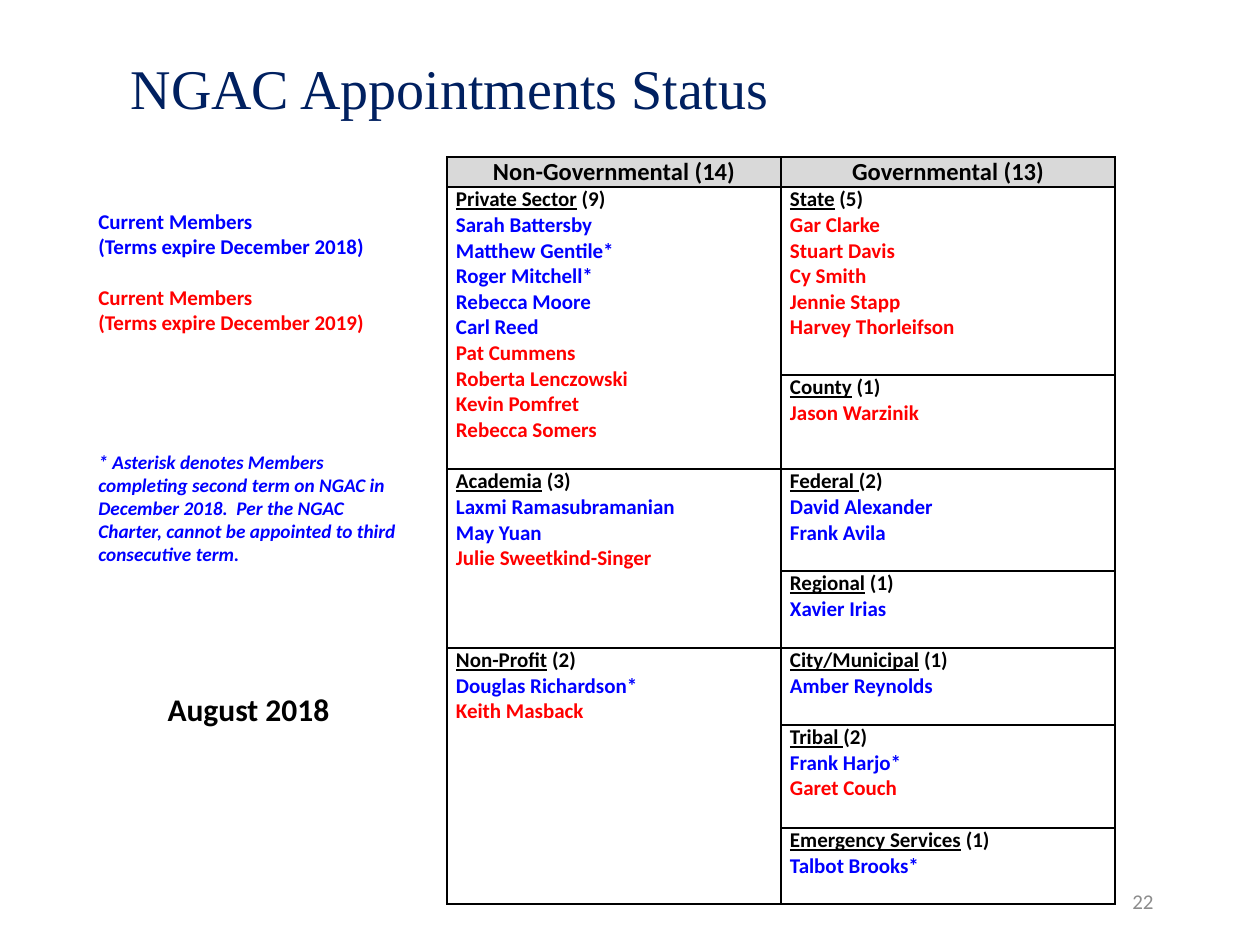
from lxml.etree import SubElement as Sub
from pptx import Presentation as Deck
from pptx.dml.color import RGBColor as Rgb
from pptx.enum.text import MSO_ANCHOR as Anchor, PP_ALIGN as Align
from pptx.oxml.ns import qn
from pptx.util import Pt

SCALE = 914400 / 126
BLUE, RED, BLACK = "0000FF", "FF0000", "000000"
BASE = dict(name="Calibri", size=Pt(12), bold=True)
TITLE = dict(name="Times New Roman", size=Pt(32), bold=False)
HEAD = BASE | dict(size=Pt(14))
NOTE = BASE | dict(size=Pt(11), italic=True)
DATE = BASE | dict(size=Pt(18))
PAGE = BASE | dict(bold=False)

HEADS = ["Non-Governmental (14)", "Governmental (13)"]
ROWS = [30, 188, 94, 102, 77, 77, 103, 76]
GROUPS = [
    (1, 0, 2, "Private Sector", " (9)",
     ["Sarah Battersby", "Matthew Gentile*", "Roger Mitchell*",
      "Rebecca Moore", "Carl Reed"],
     ["Pat Cummens", "Roberta Lenczowski", "Kevin Pomfret", "Rebecca Somers"]),
    (3, 0, 2, "Academia", " (3)",
     ["Laxmi Ramasubramanian", "May Yuan"], ["Julie Sweetkind-Singer"]),
    (5, 0, 3, "Non-Profit", " (2)", ["Douglas Richardson*"], ["Keith Masback"]),
    (1, 1, 1, "State", " (5)", [],
     ["Gar Clarke", "Stuart Davis", "Cy Smith", "Jennie Stapp",
      "Harvey Thorleifson"]),
    (2, 1, 1, "County", " (1)", [], ["Jason Warzinik"]),
    (3, 1, 1, "Federal ", "(2)", ["David Alexander", "Frank Avila"], []),
    (4, 1, 1, "Regional", " (1)", ["Xavier Irias"], []),
    (5, 1, 1, "City/Municipal", " (1)", ["Amber Reynolds"], []),
    (6, 1, 1, "Tribal ", "(2)", ["Frank Harjo*"], ["Garet Couch"]),
    (7, 1, 1, "Emergency Services", " (1)", ["Talbot Brooks*"], []),
]
KEY = [
    ("Current Members", BASE, BLUE, 0),
    ("(Terms expire December 2018)", BASE, BLUE, 0),
    ("Current Members", BASE, RED, 14.6),
    ("(Terms expire December 2019)", BASE, RED, 0),
    ("* Asterisk denotes Members completing second term on NGAC in "
     "December 2018.  Per the NGAC Charter, cannot be appointed to third "
     "consecutive term.", NOTE, BLUE, 66),
    ("August 2018", DATE, BLACK, 71),
]


def px(n):
    return round(n * SCALE)


def tint(code):
    return Rgb.from_string(code)


def put(obj, look):
    for key, val in look.items():
        setattr(obj, key, val)


def write(para, text, look, hue):
    run = para.add_run()
    run.text = text
    put(run.font, look)
    run.font.color.rgb = tint(hue)


def next_para(frame):
    first = frame.paragraphs[0]
    return frame.add_paragraph() if first.runs else first


def place(shape, box):
    put(shape, dict(zip(("left", "top", "width", "height"), map(px, box))))


def text_box(slide, box):
    frame = slide.shapes.add_textbox(*map(px, box)).text_frame
    frame.word_wrap = True
    return frame


def title(slide, box):
    shape = slide.shapes.title
    place(shape, box)
    frame = shape.text_frame
    put(frame, dict(word_wrap=True, vertical_anchor=Anchor.MIDDLE))
    para = frame.paragraphs[0]
    put(para, dict(alignment=Align.LEFT, line_spacing=0.9))
    write(para, "NGAC Appointments Status", TITLE, "002060")


def legend(slide, box):
    frame = text_box(slide, box)
    for text, look, hue, gap in KEY:
        para = next_para(frame)
        if gap:
            para.space_before = Pt(gap)
        write(para, text, look, hue)
    para.alignment = Align.CENTER


def page(slide, box):
    frame = text_box(slide, box)
    frame.vertical_anchor = Anchor.MIDDLE
    para = frame.paragraphs[0]
    para.alignment = Align.RIGHT
    write(para, "22", PAGE, "8C8C8C")


def border(cell):
    props = cell._tc.get_or_add_tcPr()
    for side in ("lnL", "lnR", "lnT", "lnB"):
        line = Sub(props, qn("a:" + side), w=str(Pt(1)))
        fill = Sub(line, qn("a:solidFill"))
        Sub(fill, qn("a:srgbClr"), val=BLACK)


def roster(slide, box):
    table = slide.shapes.add_table(len(ROWS), 2, *map(px, box)).table
    put(table, dict(first_row=False, horz_banding=False))
    for col in table.columns:
        col.width = px(box[2] / 2)
    for row, high in zip(table.rows, ROWS):
        row.height = px(high)
    pads = dict(margin_left=px(9), margin_right=px(9),
                margin_top=0, margin_bottom=0)
    for cell in table.iter_cells():
        put(cell, pads)
        border(cell)
        cell.fill.background()
    for col, text in enumerate(HEADS):
        cell = table.cell(0, col)
        cell.fill.solid()
        cell.fill.fore_color.rgb = tint("D9D9D9")
        para = cell.text_frame.paragraphs[0]
        para.alignment = Align.CENTER
        write(para, text, HEAD, BLACK)
    for row, col, span, name, count, blue, red in GROUPS:
        cell = table.cell(row, col)
        if span > 1:
            cell.merge(table.cell(row + span - 1, col))
        frame = cell.text_frame
        para = next_para(frame)
        write(para, name, BASE | dict(underline=True), BLACK)
        write(para, count, BASE, BLACK)
        for hue, names in ((BLUE, blue), (RED, red)):
            for who in names:
                write(next_para(frame), who, BASE, hue)


def main():
    deck = Deck()
    put(deck, dict(slide_width=px(1260), slide_height=px(945)))
    slide = deck.slides.add_slide(deck.slide_layouts[5])
    title(slide, (118, 42, 1047, 98))
    page(slide, (882, 876, 284, 50))
    roster(slide, (447, 157, 668, sum(ROWS)))
    legend(slide, (86, 202, 325, 537))
    deck.save("out.pptx")


if __name__ == "__main__":
    main()
